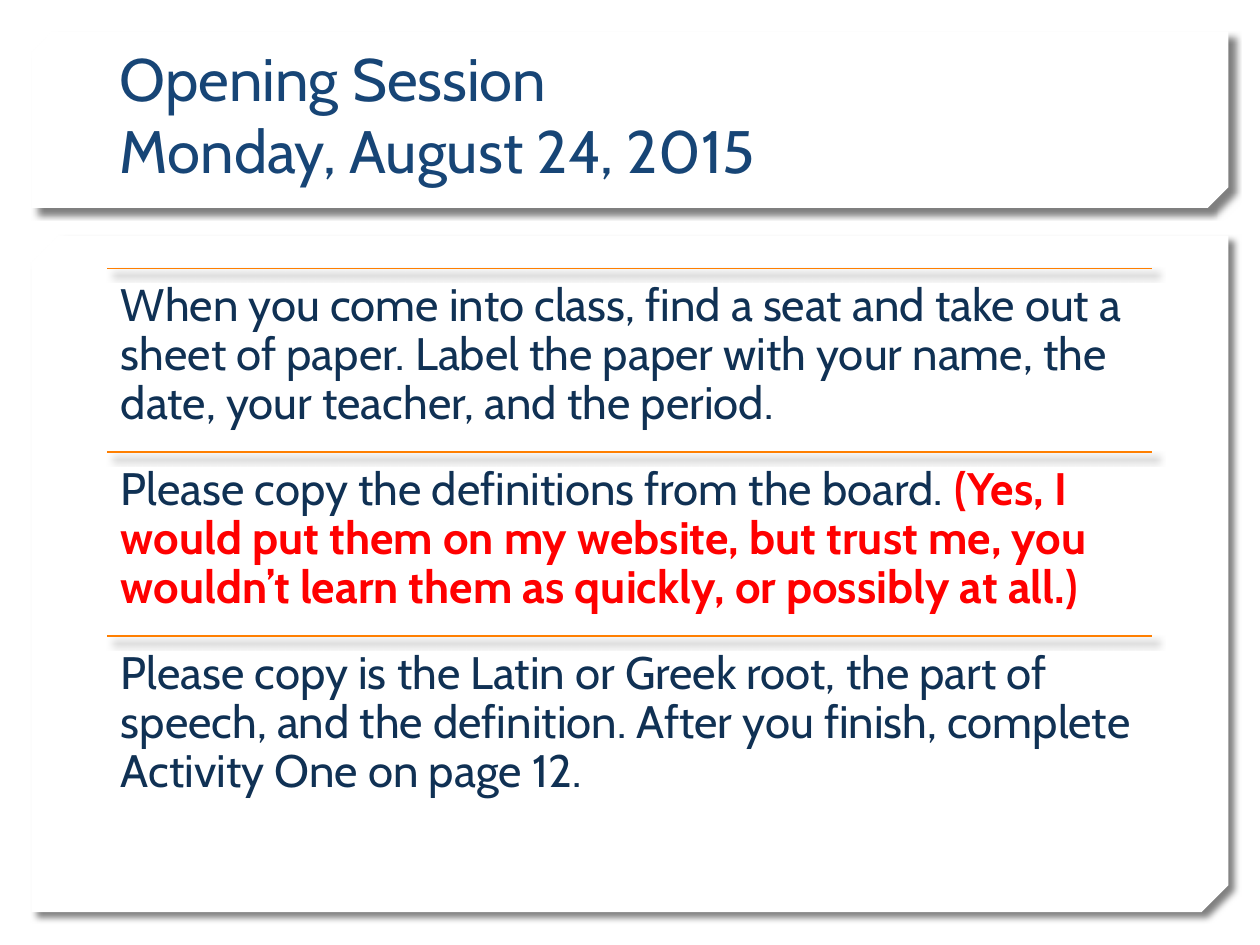
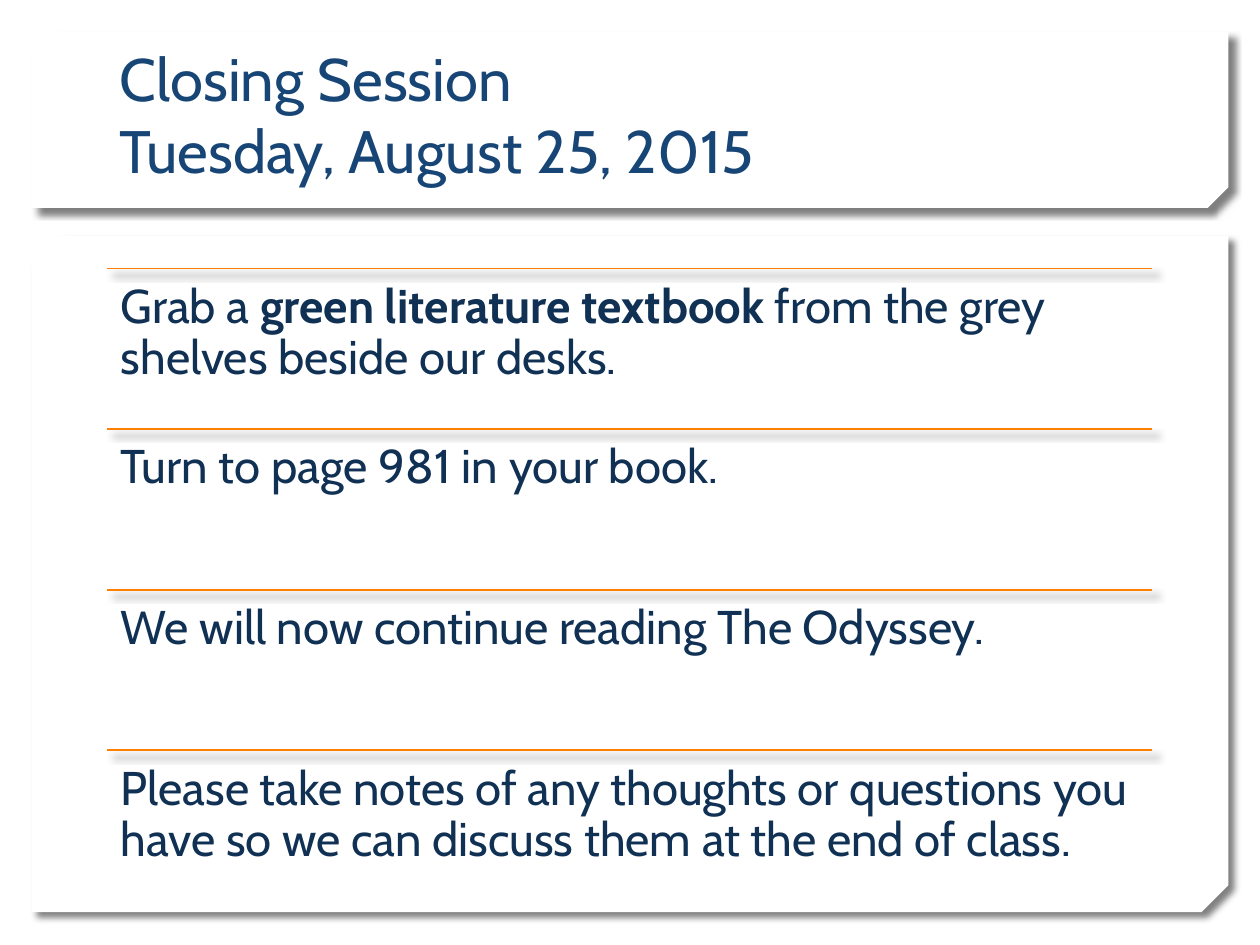
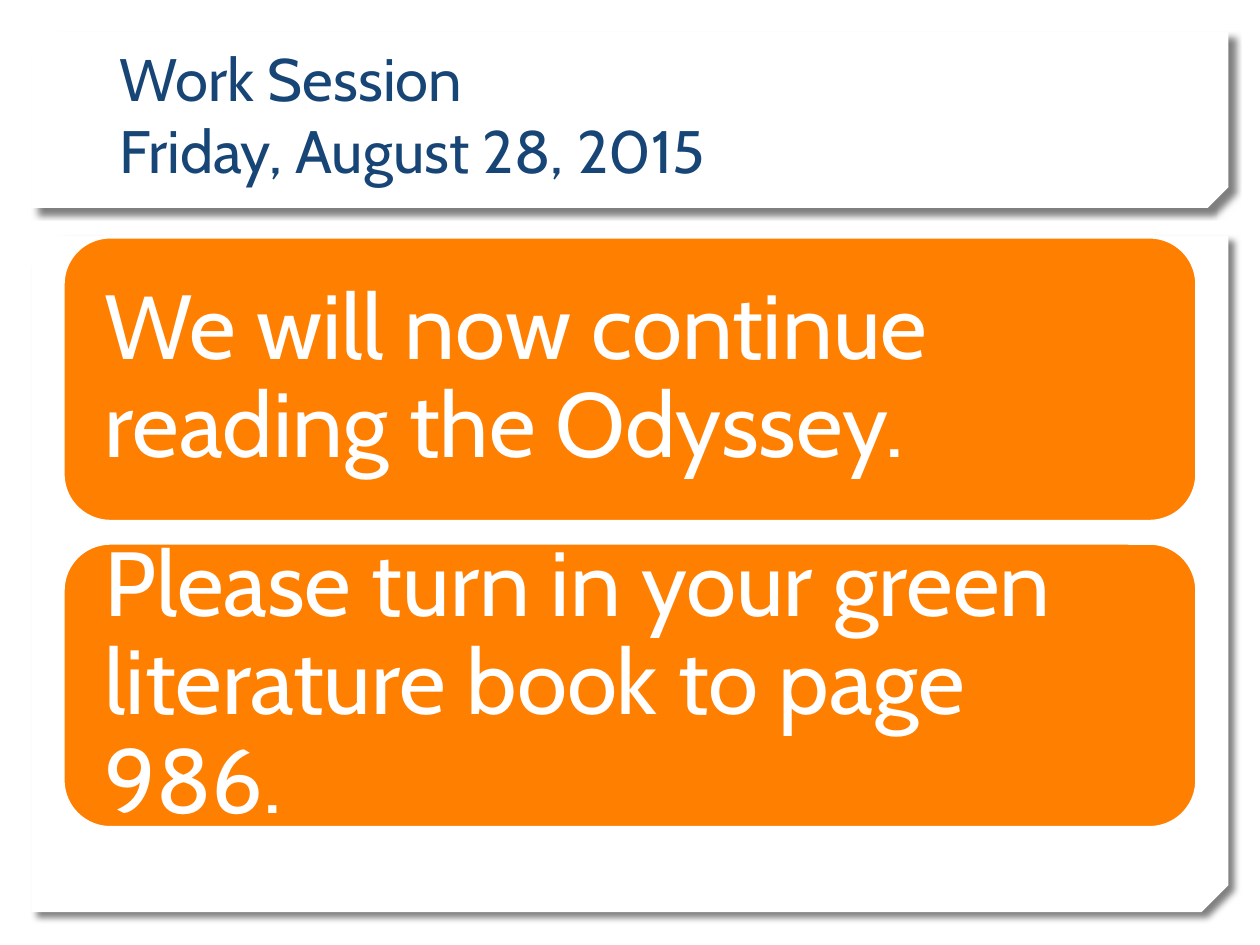
from collections import namedtuple
from copy import deepcopy

from lxml.etree import SubElement
from pptx import Presentation
from pptx.dml.color import RGBColor
from pptx.enum.shapes import MSO_CONNECTOR, MSO_SHAPE
from pptx.enum.text import MSO_ANCHOR, MSO_AUTO_SIZE, PP_ALIGN
from pptx.oxml.ns import qn
from pptx.util import Inches, Pt

FONT = "Cabin"
COLORS = {
    "paper": "FFFFFF",
    "title": "174576",
    "body": "103154",
    "accent": "FF7F01",
    "alert": "FF0000",
    "shadow": "000000",
}
Box = namedtuple("Box", "left top width height")
Span = namedtuple("Span", "text bold color", defaults=(False, None))

TITLE_PANEL = Box(0.25, 0.25, 9.5, 1.4)
BODY_PANEL = Box(0.25, 1.87, 9.5, 5.37)
TITLE_BOX = Box(0.85, 0.32, 8.29, 1.25)
CARD_BOX = Box(0.5, 1.88, 9, 4.69)
CARD_GAP = 0.17

OPENING_STEPS = [
    [Span("When you come into class, find a seat and take out a sheet of paper. "
          "Label the paper with your name, the date, your teacher, and the period.")],
    [Span("Please copy the definitions from the board. "),
     Span("(Yes, I would put them on my website, but trust me, you wouldn’t learn "
          "them as quickly, or possibly at all.)", True, "alert")],
    [Span("Please copy is the Latin or Greek root, the part of speech, and the "
          "definition. After you finish, complete Activity One on page 12.")],
]
CLOSING_STEPS = [
    [Span("Grab a "), Span("green literature textbook ", True),
     Span("from the grey shelves beside our desks.")],
    [Span("Turn to page 981 in your book.")],
    [Span("We will now continue reading The Odyssey.")],
    [Span("Please take notes of any thoughts or questions you have so we can "
          "discuss them at the end of class.")],
]
WORK_STEPS = [
    [Span("We will now continue reading the Odyssey.")],
    [Span("Please turn in your green literature book to page 986.")],
]


def rgb(name):
    """Return the named colour."""
    return RGBColor.from_string(COLORS[name])


def lengths(box):
    """Return the four measures of a box as lengths."""
    return [Inches(value) for value in box]


def write(frame, spans, *, size, color, margin=0.11, anchor=MSO_ANCHOR.TOP, spacing=None):
    """Fill a text frame with one left-aligned paragraph of formatted spans."""
    frame.word_wrap = True
    frame.auto_size = MSO_AUTO_SIZE.NONE
    frame.vertical_anchor = anchor
    frame.margin_left = frame.margin_right = Inches(margin)
    frame.margin_top = frame.margin_bottom = Inches(margin)
    para = frame.paragraphs[0]
    para.alignment = PP_ALIGN.LEFT
    para.line_spacing = spacing
    for span in spans:
        for index, line in enumerate(span.text.split("\n")):
            if index:
                para.add_line_break()
            run = para.add_run()
            run.text = line
            run.font.name = FONT
            run.font.size = Pt(size)
            run.font.bold = span.bold
            run.font.color.rgb = rgb(span.color or color)
    for line_break in para._p.findall(qn("a:br")):
        line_break.append(deepcopy(run.font._element))


def add_shadow(shape):
    """Give a shape a soft shadow to the lower right."""
    effects = SubElement(shape.element.spPr, qn("a:effectLst"))
    outer = SubElement(effects, qn("a:outerShdw"), blurRad=str(Pt(4)), dist=str(Pt(5)),
                       dir="2700000", algn="tl", rotWithShape="0")
    color = SubElement(outer, qn("a:srgbClr"), val=COLORS["shadow"])
    SubElement(color, qn("a:alpha"), val="50000")


def add_panel(page, box, snip):
    """Add a white panel with snipped corners."""
    panel = page.shapes.add_shape(MSO_SHAPE.SNIP_2_DIAG_RECTANGLE, *lengths(box))
    panel.adjustments[0] = 0
    panel.adjustments[1] = snip
    panel.element.spPr.find(qn("a:xfrm")).set("flipV", "1")
    panel.fill.solid()
    panel.fill.fore_color.rgb = rgb("paper")
    panel.line.fill.background()
    add_shadow(panel)


def add_page(deck, heading):
    """Add a slide with both panels and its title."""
    page = deck.slides.add_slide(deck.slide_layouts[5])
    page.background.fill.solid()
    page.background.fill.fore_color.rgb = rgb("paper")
    add_panel(page, BODY_PANEL, 0.04)
    add_panel(page, TITLE_PANEL, 0.117)
    title = page.shapes.title
    title.element.getparent().append(title.element)
    title.left, title.top, title.width, title.height = lengths(TITLE_BOX)
    write(title.text_frame, [Span(heading)], size=34.2, color="title", margin=0.1,
          anchor=MSO_ANCHOR.BOTTOM)
    return page


def add_ruled_steps(page, box, steps):
    """Stack steps in equal rows, each under an orange rule."""
    height = box.height / len(steps)
    size = 26 if len(steps) == 3 else 27
    for index, spans in enumerate(steps):
        row = Box(box.left, box.top + index * height, box.width, height)
        left, top, width, _ = lengths(row)
        rule = page.shapes.add_connector(MSO_CONNECTOR.STRAIGHT, left, top, left + width, top)
        rule.line.color.rgb = rgb("accent")
        rule.line.width = Pt(1)
        add_shadow(rule)
        text = page.shapes.add_textbox(*lengths(row))
        write(text.text_frame, spans, size=size, color="body", spacing=0.9)


def add_cards(page, box, steps):
    """Stack steps as equal orange rounded cards."""
    height = (box.height - CARD_GAP * (len(steps) - 1)) / len(steps)
    for index, spans in enumerate(steps):
        top = box.top + index * (height + CARD_GAP)
        card = page.shapes.add_shape(MSO_SHAPE.ROUNDED_RECTANGLE,
                                     *lengths(Box(box.left, top, box.width, height)))
        card.shadow.inherit = False
        card.fill.solid()
        card.fill.fore_color.rgb = rgb("accent")
        card.line.color.rgb = rgb("paper")
        card.line.width = Pt(2)
        write(card.text_frame, spans, size=52, color="paper", margin=0.22,
              anchor=MSO_ANCHOR.MIDDLE, spacing=0.9)


def main():
    """Build and save the deck."""
    deck = Presentation()
    deck.slide_width, deck.slide_height = Inches(10), Inches(7.5)
    opening = add_page(deck, "Opening Session\nMonday, August 24, 2015")
    add_ruled_steps(opening, Box(0.85, 2.13, 8.29, 4.38), OPENING_STEPS)
    closing = add_page(deck, "Closing Session\nTuesday, August 25, 2015")
    add_ruled_steps(closing, Box(0.85, 2.13, 8.29, 5.1), CLOSING_STEPS)
    work = add_page(deck, "Work Session\nFriday, August 28, 2015")
    add_cards(work, CARD_BOX, WORK_STEPS)
    deck.save("out.pptx")


if __name__ == "__main__":
    main()
